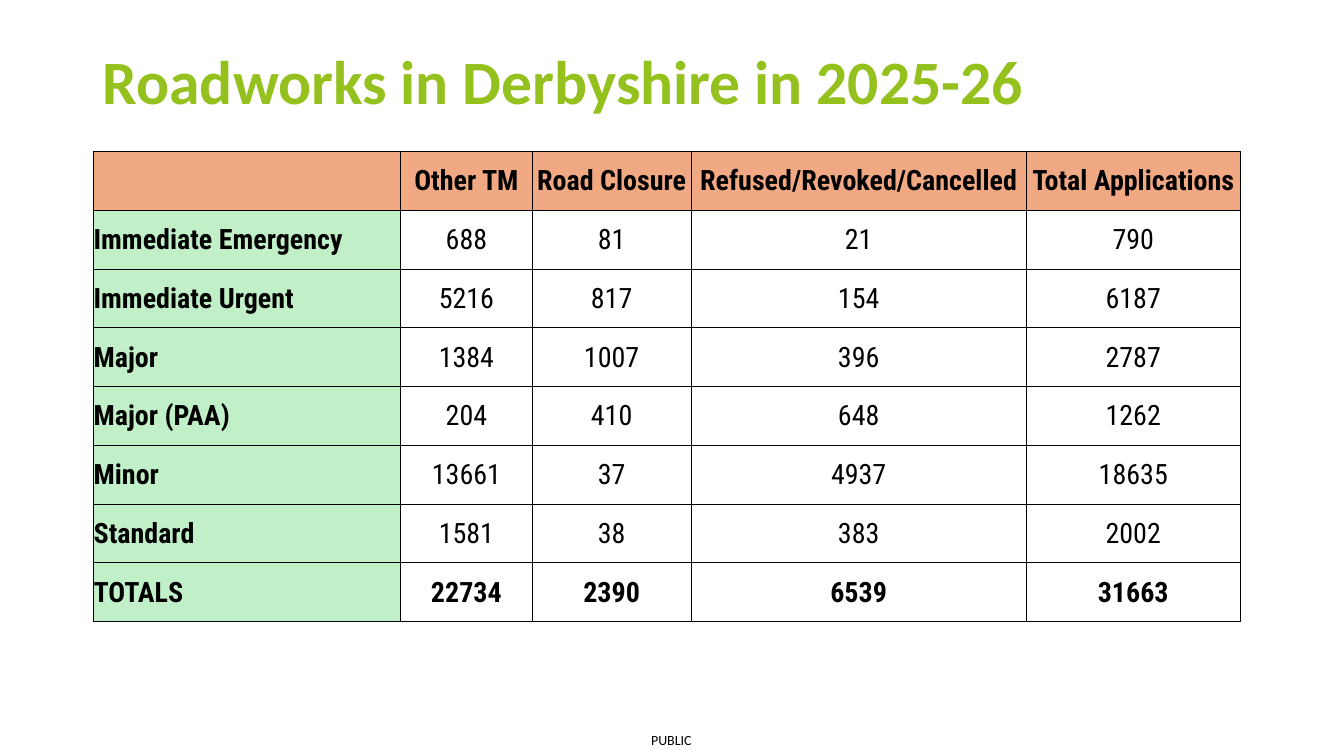
"""Build the Derbyshire roadworks summary slide."""
import dataclasses

import lxml.etree
import pptx
import pptx.dml.color
import pptx.enum.text
import pptx.oxml.ns
import pptx.util

Cm = pptx.util.Cm
ALIGN = pptx.enum.text.PP_ALIGN
MIDDLE = pptx.enum.text.MSO_ANCHOR.MIDDLE
TITLE_ONLY = 5

COLUMN_WIDTHS = (7.75, 3.33, 3.99, 8.46, 5.38)
ROW_HEIGHT = 1.48
ROADWORKS = (
    ("", "Other TM", "Road Closure", "Refused/Revoked/Cancelled", "Total Applications"),
    ("Immediate Emergency", 688, 81, 21, 790),
    ("Immediate Urgent", 5216, 817, 154, 6187),
    ("Major", 1384, 1007, 396, 2787),
    ("Major (PAA)", 204, 410, 648, 1262),
    ("Minor", 13661, 37, 4937, 18635),
    ("Standard", 1581, 38, 383, 2002),
    ("TOTALS", 22734, 2390, 6539, 31663),
)


@dataclasses.dataclass(frozen=True)
class Theme:
    """Colours, fonts and type sizes."""
    title: str = "95C11F"
    text: str = "000000"
    border: str = "000000"
    header_fill: str = "F1A983"
    label_fill: str = "C1F0C8"
    font: str = "Calibri"
    table_font: str = "Roboto Condensed"
    title_size: int = 44
    table_size: int = 20
    marking_size: int = 10
    border_width: float = 0.5


def write_text(tf, text, *, font, size, color, bold=False, align=ALIGN.LEFT, spacing=None):
    """Put one formatted paragraph in a text frame."""
    p = tf.paragraphs[0]
    p.alignment = align
    if spacing:
        p.line_spacing = spacing
    r = p.add_run()
    r.text = text
    r.font.name = font
    r.font.size = pptx.util.Pt(size)
    r.font.bold = bold
    r.font.color.rgb = pptx.dml.color.RGBColor.from_string(color)


class SlideBuilder:
    """Hold the theme and the current slide."""

    def __init__(self, prs, theme):
        """Add a title-only slide."""
        self.theme = theme
        self.s = prs.slides.add_slide(prs.slide_layouts[TITLE_ONLY])

    def title(self, text, left, top, width, height):
        """Place and fill the title placeholder."""
        sp = self.s.shapes.title
        sp.left, sp.top, sp.width, sp.height = map(Cm, (left, top, width, height))
        tf = sp.text_frame
        tf.word_wrap = True
        tf.auto_size = pptx.enum.text.MSO_AUTO_SIZE.NONE
        tf.vertical_anchor = MIDDLE
        write_text(tf, text, font=self.theme.font, size=self.theme.title_size,
                   color=self.theme.title, bold=True, spacing=0.9)

    def marking(self, text, left, top, width, height):
        """Add the small classification marking."""
        sp = self.s.shapes.add_textbox(*map(Cm, (left, top, width, height)))
        tf = sp.text_frame
        tf.word_wrap = False
        tf.auto_size = pptx.enum.text.MSO_AUTO_SIZE.SHAPE_TO_FIT_TEXT
        tf.margin_left = tf.margin_right = tf.margin_top = tf.margin_bottom = 0
        write_text(tf, text, font=self.theme.font, size=self.theme.marking_size,
                   color=self.theme.text)

    def table(self, rows, widths, row_height, left, top):
        """Add a table with a header row, a label column and a totals row."""
        frame = self.s.shapes.add_table(
            len(rows), len(widths), Cm(left), Cm(top),
            Cm(sum(widths)), Cm(row_height * len(rows)))
        table = frame.table
        for column, width in zip(table.columns, widths):
            column.width = Cm(width)
        for i, values in enumerate(rows):
            table.rows[i].height = Cm(row_height)
            for j, value in enumerate(values):
                cell = table.cell(i, j)
                fill = (self.theme.header_fill if i == 0
                        else self.theme.label_fill if j == 0 else None)
                self.style_cell(cell, fill)
                if value != "":
                    write_text(cell.text_frame, str(value), font=self.theme.table_font,
                               size=self.theme.table_size, color=self.theme.text,
                               bold=i in (0, len(rows) - 1) or j == 0,
                               align=ALIGN.CENTER if j else ALIGN.LEFT)

    def style_cell(self, cell, fill):
        """Set the margins, borders and fill of a cell."""
        cell.vertical_anchor = MIDDLE
        cell.margin_left = cell.margin_right = cell.margin_top = Cm(0.02)
        cell.margin_bottom = 0
        qn = pptx.oxml.ns.qn
        tc_pr = cell._tc.get_or_add_tcPr()
        for side in ("lnL", "lnR", "lnT", "lnB"):
            ln = lxml.etree.SubElement(tc_pr, qn(f"a:{side}"),
                                       w=str(pptx.util.Pt(self.theme.border_width)))
            solid = lxml.etree.SubElement(ln, qn("a:solidFill"))
            lxml.etree.SubElement(solid, qn("a:srgbClr"), val=self.theme.border)
        if fill:
            cell.fill.solid()
            cell.fill.fore_color.rgb = pptx.dml.color.RGBColor.from_string(fill)
        else:
            cell.fill.background()


def main():
    """Build and save the presentation."""
    prs = pptx.Presentation()
    prs.slide_width, prs.slide_height = Cm(33.87), Cm(19.05)
    slide = SlideBuilder(prs, Theme())
    slide.marking("PUBLIC", 16.41, 18.44, 1.12, 0.43)
    slide.title("Roadworks in Derbyshire in 2025-26", 2.34, 1.02, 29.21, 2.24)
    slide.table(ROADWORKS, COLUMN_WIDTHS, ROW_HEIGHT, 2.34, 3.82)
    prs.save("out.pptx")


if __name__ == "__main__":
    main()
